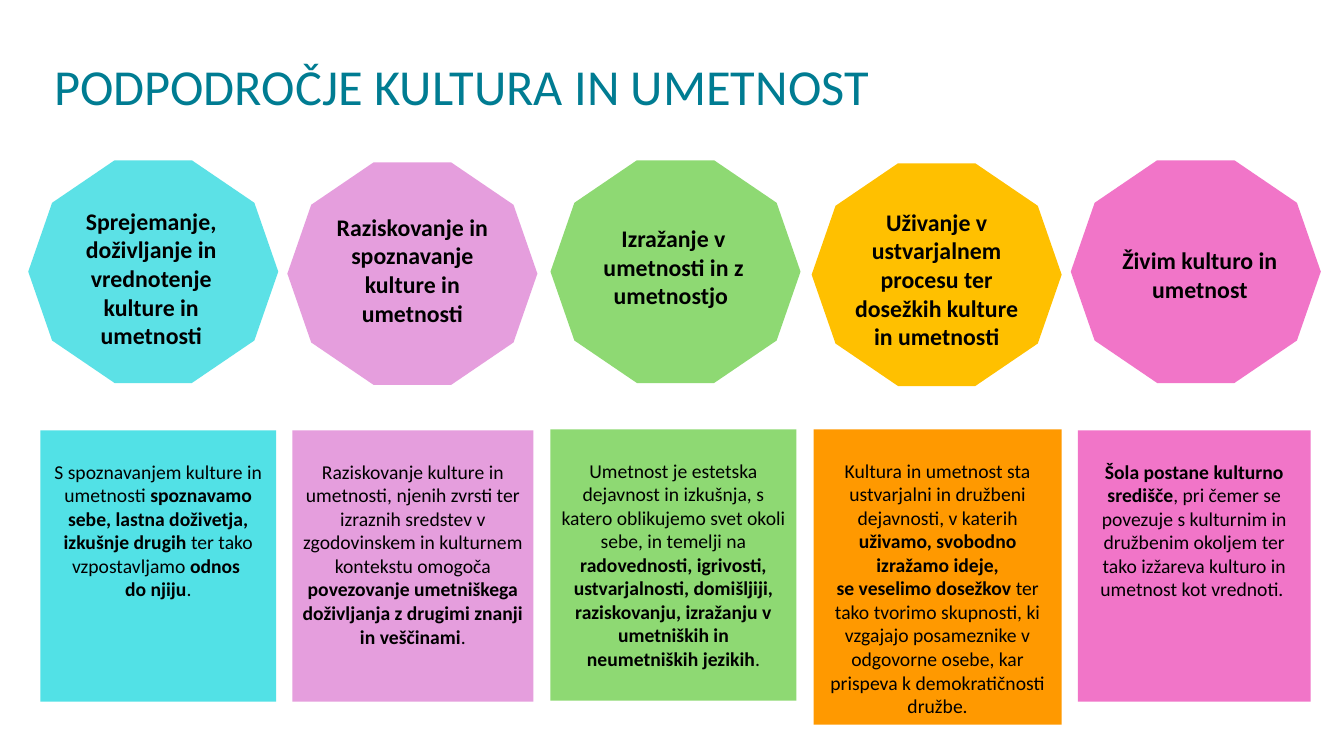
import pptx
import pptx.util
import pptx.dml.color
import pptx.enum.shapes
import pptx.enum.text

Inches = pptx.util.Inches
SHAPE = pptx.enum.shapes.MSO_SHAPE
ALIGN = pptx.enum.text.PP_ALIGN
ANCHOR = pptx.enum.text.MSO_ANCHOR

# Label: decagon left, top, fill, then text left, top, width, text
LABELS = [
    (0.28, 1.59, "5CE1E6", 0.54, 2.0, 1.92,
     "Sprejemanje, doživljanje in vrednotenje kulture in umetnosti"),
    (2.85, 1.61, "E59EDD", 3.23, 2.06, 1.72,
     "Raziskovanje in spoznavanje kulture in umetnosti"),
    (5.46, 1.59, "8ED973", 5.72, 2.17, 1.92,
     "Izražanje v umetnosti in z umetnostjo "),
    (8.05, 1.62, "FFC000", 8.33, 2.01, 1.92,
     "Uživanje v ustvarjalnem procesu ter dosežkih kulture in umetnosti"),
    (10.62, 1.59, "F175C8", 10.94, 2.39, 1.92,
     "Živim kulturo in umetnost"),
]

# Card: left, top, width, height, fill, paragraphs; * switches bold, \v breaks a line
CARDS = [
    (0.4, 4.27, 2.34, 2.69, "52E1E6", [
        "S spoznavanjem kulture in umetnosti *spoznavamo sebe, lastna doživetja, "
        "izkušnje drugih *ter tako vzpostavljamo *odnos \vdo njiju*."]),
    (2.9, 4.27, 2.39, 2.69, "E59EDD", [
        "Raziskovanje kulture in umetnosti, njenih zvrsti ter izraznih sredstev v "
        "zgodovinskem in kulturnem kontekstu omogoča *povezovanje umetniškega "
        "doživljanja z drugimi znanji in veščinami*."]),
    (5.46, 4.26, 2.44, 2.69, "8ED973", [
        "Umetnost je estetska dejavnost in izkušnja, s katero oblikujemo svet okoli "
        "sebe, in temelji na *radovednosti, igrivosti, ustvarjalnosti, domišljiji, "
        "raziskovanju, izražanju v umetniških in neumetniških jezikih*."]),
    (8.07, 4.26, 2.46, 2.93, "FF9900", [
        "Kultura in umetnost sta ustvarjalni in družbeni dejavnosti, v katerih "
        "*uživamo, svobodno izražamo ideje,",
        "*se veselimo dosežkov *ter tako tvorimo skupnosti, ki vzgajajo posameznike v "
        "odgovorne osebe, kar prispeva k demokratičnosti družbe."]),
    (10.69, 4.27, 2.31, 2.69, "F175C8", [
        "*Šola postane kulturno središče*, pri čemer se povezuje s kulturnim in "
        "družbenim okoljem ter tako izžareva kulturo in umetnost kot vrednoti. "]),
]


def color(code):
    return pptx.dml.color.RGBColor.from_string(code)


def write(para, text, size, code="000000", align=ALIGN.CENTER):
    """Fill a paragraph; every second piece between stars is bold."""
    para.alignment = align
    for index, piece in enumerate(text.split("*")):
        for row, line in enumerate(piece.split("\v")):
            if row:
                para.add_line_break()
            if not line:
                continue
            run = para.add_run()
            run.text = line
            run.font.name = "Calibri"
            run.font.size = pptx.util.Pt(size)
            run.font.bold = index % 2 == 1
            run.font.color.rgb = color(code)


def block(slide, kind, box, fill):
    shape = slide.shapes.add_shape(kind, *map(Inches, box))
    shape.shadow.inherit = False
    shape.fill.solid()
    shape.fill.fore_color.rgb = color(fill)
    shape.line.fill.background()
    return shape


def textbox(slide, box):
    frame = slide.shapes.add_textbox(*map(Inches, box)).text_frame
    frame.word_wrap = True
    return frame


def title(slide, box, text):
    frame = textbox(slide, box)
    frame.vertical_anchor = ANCHOR.MIDDLE
    para = frame.paragraphs[0]
    para.line_spacing = 0.9
    write(para, text, 36, "007C92", ALIGN.LEFT)


def label(slide, box, fill, area, text):
    block(slide, SHAPE.DECAGON, box, fill)
    frame = textbox(slide, area)
    write(frame.paragraphs[0], "*" + text, 17)


def card(slide, box, fill, texts):
    frame = block(slide, SHAPE.RECTANGLE, box, fill).text_frame
    frame.word_wrap = True
    frame.vertical_anchor = ANCHOR.TOP
    frame.margin_top = Inches(0.29)
    for index, text in enumerate(texts):
        para = frame.add_paragraph() if index else frame.paragraphs[0]
        write(para, text, 14)


def main():
    deck = pptx.Presentation()
    deck.slide_width = Inches(13.33)
    deck.slide_height = Inches(7.5)
    slide = deck.slides.add_slide(deck.slide_layouts[6])

    # Heading
    title(slide, (0.44, 0.16, 11.5, 1.45), "PODPODROČJE KULTURA IN UMETNOST")

    # Decagons with goals
    for left, top, fill, x, y, width, text in LABELS:
        label(slide, (left, top, 2.48, 2.21), fill, (x, y, width, 1.53), text)

    # Explanations below
    for *box, fill, texts in CARDS:
        card(slide, box, fill, texts)

    deck.save("out.pptx")


if __name__ == "__main__":
    main()
